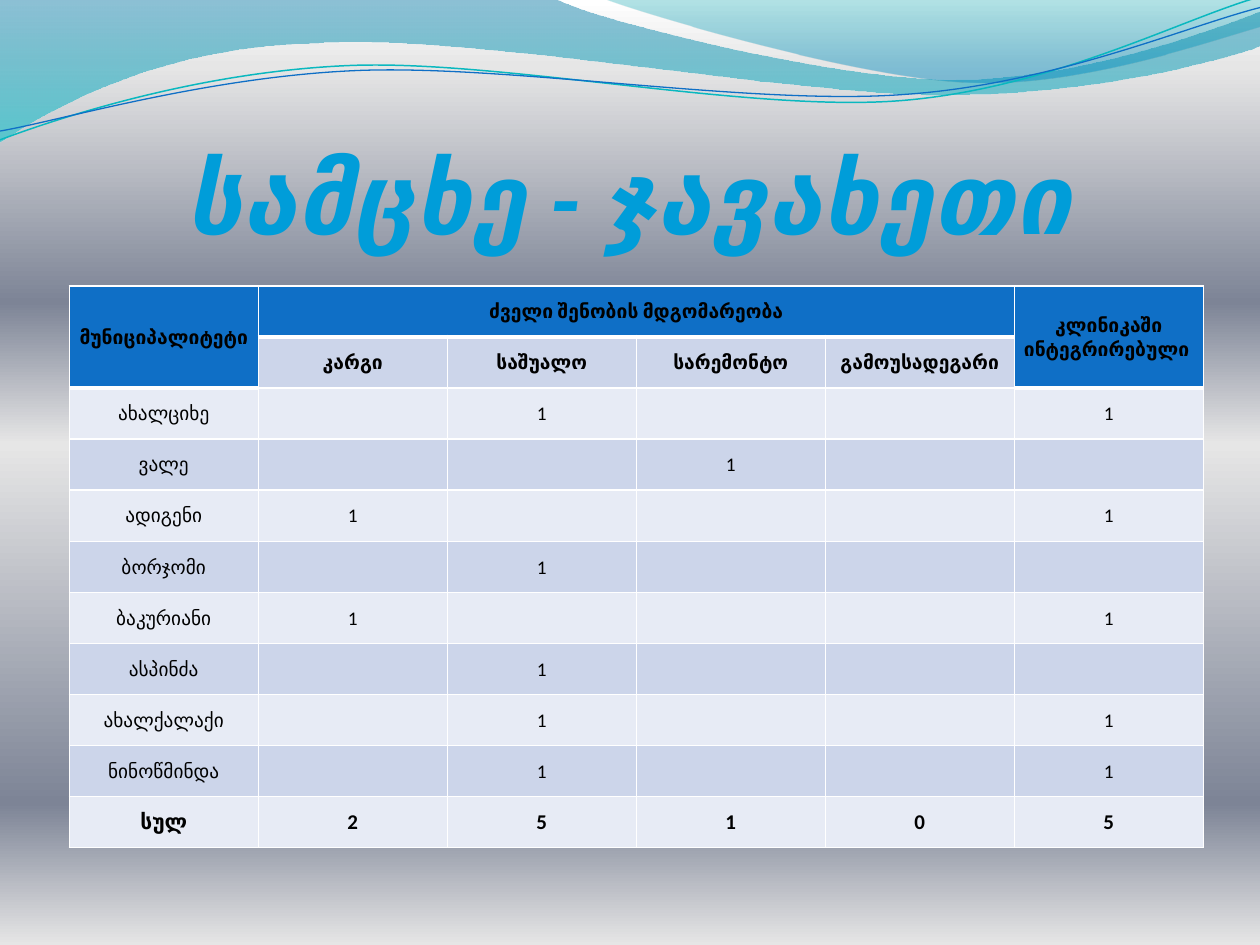
import math

from lxml import etree
from pptx import Presentation
from pptx.dml.color import RGBColor
from pptx.enum import text
from pptx.oxml.ns import qn
from pptx.util import Inches, Pt

WHITE = RGBColor(0xFF, 0xFF, 0xFF)
BLACK = RGBColor(0, 0, 0)
SILVER = RGBColor(0xE6, 0xE6, 0xE6)
SLATE = RGBColor(0x7D, 0x84, 0x96)
BLUE = RGBColor(0x0F, 0x6F, 0xC6)
TURQUOISE = RGBColor(0x0A, 0xB8, 0xBF)
DARK_BAND = RGBColor(0xCC, 0xD5, 0xEA)
LIGHT_BAND = RGBColor(0xE7, 0xEB, 0xF5)

# Gradient stops: position in percent, colour, opacity in percent
BACKGROUND = [(0, WHITE, 100), (7, SILVER, 100), (32, SLATE, 100),
              (47, SILVER, 100), (85, SLATE, 100), (100, SILVER, 100)]
WIDE_FILL = [(0, RGBColor(0, 0x74, 0xA1), 45), (100, RGBColor(0, 0xC6, 0xCF), 55)]
RIGHT_FILL = [(0, RGBColor(0, 0xA1, 0xA9), 30), (80, RGBColor(0, 0x8B, 0xBF), 45)]
TITLE_FILL = [(25, RGBColor(0, 0x9D, 0xD9), 100), (100, RGBColor(0, 0x6F, 0x99), 100)]

# Outlines in inches: a step of one point is a line, of three points a cubic curve
WIDE_WAVE = [
    [(0, 0)], [(4.4, -0.01)],
    [(4.76, 0.17), (6.64, 0.63), (7.58, 0.63)],
    [(8.53, 0.63), (9.58, 0.26), (10, 0.09)], [(10.01, 0.36)],
    [(9.83, 0.44), (8.7, 0.76), (7.46, 0.75)],
    [(6.22, 0.75), (3.82, 0.28), (2.57, 0.34)],
    [(1.29, 0.36), (0.46, 0.83), (-0.01, 1.13)], [(0, 0)]]
RIGHT_WAVE = [
    [(4.79, -0.01)],
    [(5.09, 0.11), (6.82, 0.62), (7.69, 0.65)],
    [(8.56, 0.69), (9.61, 0.32), (10, 0.21)], [(10, 0)], [(4.79, -0.01)]]
TURQUOISE_LINE = [
    [(0, 1.11)],
    [(0.48, 0.93), (1.58, 0.57), (2.77, 0.52)],
    [(3.95, 0.47), (5.93, 0.89), (7.13, 0.8)],
    [(8.33, 0.71), (9.38, 0.15), (9.98, -0.02)]]
BLUE_LINE = [
    [(0, 1.04)],
    [(0.47, 0.96), (1.64, 0.61), (2.83, 0.56)],
    [(4.03, 0.51), (5.97, 0.84), (7.17, 0.75)],
    [(8.36, 0.67), (9.41, 0.21), (10, 0.06)]]
LINE_TILT = -2.7
LINE_CENTER = (4.99, 0.58)

ROWS = [
    ["მუნიციპალიტეტი", "ძველი შენობის მდგომარეობა", "", "", "", "კლინიკაში ინტეგრირებული "],
    ["", "კარგი", "საშუალო", "სარემონტო", "გამოუსადეგარი", ""],
    ["ახალციხე", "", "1", "", "", "1"],
    ["ვალე", "", "", "1", "", ""],
    ["ადიგენი", "1", "", "", "", "1"],
    ["ბორჯომი", "", "1", "", "", ""],
    ["ბაკურიანი", "1", "", "", "", "1"],
    ["ასპინძა", "", "1", "", "", ""],
    ["ახალქალაქი", "", "1", "", "", "1"],
    ["ნინოწმინდა", "", "1", "", "", "1"],
    ["სულ", "2", "5", "1", "0", "5"],
]


def set_gradient(fill, parent, stops):
    """Give parent, the element that holds fill, a gradient from top to bottom."""
    fill.solid()
    gradient = etree.Element(qn("a:gradFill"), rotWithShape="1")
    stop_list = etree.SubElement(gradient, qn("a:gsLst"))
    for position, color, opacity in stops:
        stop = etree.SubElement(stop_list, qn("a:gs"), pos=str(position * 1000))
        value = etree.SubElement(stop, qn("a:srgbClr"), val=str(color))
        if opacity < 100:
            etree.SubElement(value, qn("a:alpha"), val=str(opacity * 1000))
    etree.SubElement(gradient, qn("a:lin"), ang="5400000", scaled="0")
    parent.replace(parent.find(qn("a:solidFill")), gradient)


def turn(point, center, degrees):
    angle = math.radians(degrees)
    x, y = point[0] - center[0], point[1] - center[1]
    return (center[0] + x * math.cos(angle) - y * math.sin(angle),
            center[1] + x * math.sin(angle) + y * math.cos(angle))


def add_outline(shapes, left, top, outline, close, tilt=0):
    """Draw an outline; a tilted one is laid level and then rotated as a shape."""
    points = [turn(point, LINE_CENTER, -tilt) for step in outline for point in step]
    points = [(left + Inches(x), top + Inches(y)) for x, y in points]
    builder = shapes.build_freeform(*points[0])
    builder.add_line_segments(points[1:], close=close)
    shape = builder.convert_to_shape()
    shape.shadow.inherit = False
    shape.rotation = tilt
    segments = iter(list(shape._element.iter(qn("a:lnTo"))))
    for step in outline[1:]:
        lines = [next(segments) for _ in step]
        if len(lines) == 3:
            curve = etree.Element(qn("a:cubicBezTo"))
            lines[0].addprevious(curve)
            for line in lines:
                curve.append(line[0])
                line.getparent().remove(line)
    return shape


def add_waves(slide, left, top):
    for outline, stops in ((WIDE_WAVE, WIDE_FILL), (RIGHT_WAVE, RIGHT_FILL)):
        wave = add_outline(slide.shapes, left, top, outline, close=True)
        set_gradient(wave.fill, wave._element.spPr, stops)
        wave.line.fill.background()
    group = slide.shapes.add_group_shape()
    for outline, color, width in ((TURQUOISE_LINE, TURQUOISE, 0.85), (BLUE_LINE, BLUE, 0.75)):
        line = add_outline(group.shapes, left, top, outline, close=False, tilt=LINE_TILT)
        line.fill.background()
        line.line.color.rgb = color
        line.line.width = Pt(width)


def place_title(slide, left, top, width, height):
    title = slide.shapes.title
    slide.shapes._spTree.append(title._element)  # in front of the waves
    title.left, title.top, title.width, title.height = left, top, width, height
    frame = title.text_frame
    frame.margin_left = frame.margin_right = frame.margin_bottom = 0
    frame.margin_top = Inches(0.05)
    frame.vertical_anchor = text.MSO_ANCHOR.BOTTOM
    frame.auto_size = text.MSO_AUTO_SIZE.NONE
    paragraph = frame.paragraphs[0]
    paragraph.alignment = text.PP_ALIGN.CENTER
    run = paragraph.add_run()
    run.text = "სამცხე - ჯავახეთი"
    run.font.name = "Calibri"
    run.font.size = Pt(56)
    run.font.bold = run.font.italic = True
    properties = run._r.get_or_add_rPr()
    properties.set("spc", "50")
    set_gradient(run.font.fill, properties, TITLE_FILL)


def is_header(row, column):
    return row == 0 or (row == 1 and column in (0, 5))


def set_borders(cell, top, bottom):
    properties = cell._tc.get_or_add_tcPr()
    for side, width in (("L", 1), ("R", 1), ("T", top), ("B", bottom)):
        border = etree.SubElement(properties, qn(f"a:ln{side}"), w=str(Pt(width)))
        fill = etree.SubElement(border, qn("a:solidFill"))
        etree.SubElement(fill, qn("a:srgbClr"), val=str(WHITE))


def format_cell(cell, row, column, words):
    header = is_header(row, column)
    set_borders(cell, top=3 if row and is_header(row - 1, column) else 1,
                bottom=3 if header else 1)
    cell.fill.solid()
    cell.fill.fore_color.rgb = BLUE if header else DARK_BAND if row % 2 else LIGHT_BAND
    cell.margin_left = cell.margin_right = cell.margin_top = Inches(0.01)
    cell.margin_bottom = 0
    cell.vertical_anchor = text.MSO_ANCHOR.MIDDLE
    if not words:
        return
    paragraph = cell.text_frame.paragraphs[0]
    paragraph.alignment = text.PP_ALIGN.CENTER
    run = paragraph.add_run()
    run.text = words
    total = row == len(ROWS) - 1
    run.font.name = "Calibri" if column else "Roboto"
    run.font.size = Pt(12 if total else 11)
    run.font.bold = row < 2 or total
    run.font.color.rgb = BLACK


def add_building_table(slide, left, top, width, height):
    table = slide.shapes.add_table(len(ROWS), len(ROWS[0]), left, top, width, height).table
    table.horz_banding = False
    for row, values in enumerate(ROWS):
        for column, words in enumerate(values):
            format_cell(table.cell(row, column), row, column, words)
    for first, last in (((0, 0), (1, 0)), ((0, 1), (0, 4)), ((0, 5), (1, 5))):
        table.cell(*first).merge(table.cell(*last))


def main():
    presentation = Presentation()
    presentation.slide_width, presentation.slide_height = Inches(10), Inches(7.5)
    slide = presentation.slides.add_slide(presentation.slide_layouts[5])
    background_fill = slide.background.fill
    set_gradient(background_fill, slide._element.find(".//" + qn("p:bgPr")), BACKGROUND)
    add_waves(slide, 0, 0)
    place_title(slide, Inches(0.5), Inches(0.77), Inches(9), Inches(1.25))
    add_building_table(slide, Inches(0.55), Inches(2.27), Inches(9), Inches(4.46))
    presentation.save("out.pptx")


if __name__ == "__main__":
    main()
